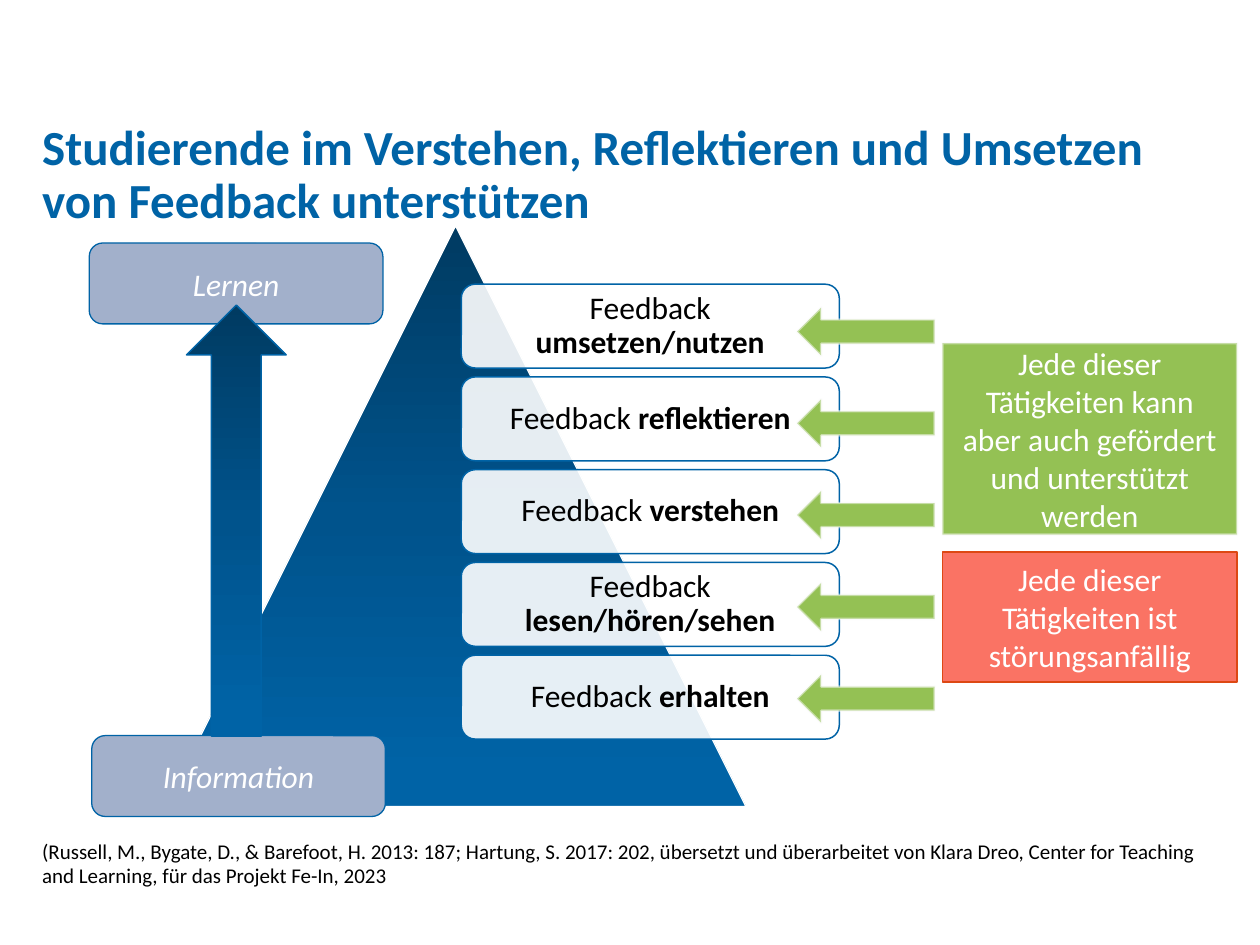
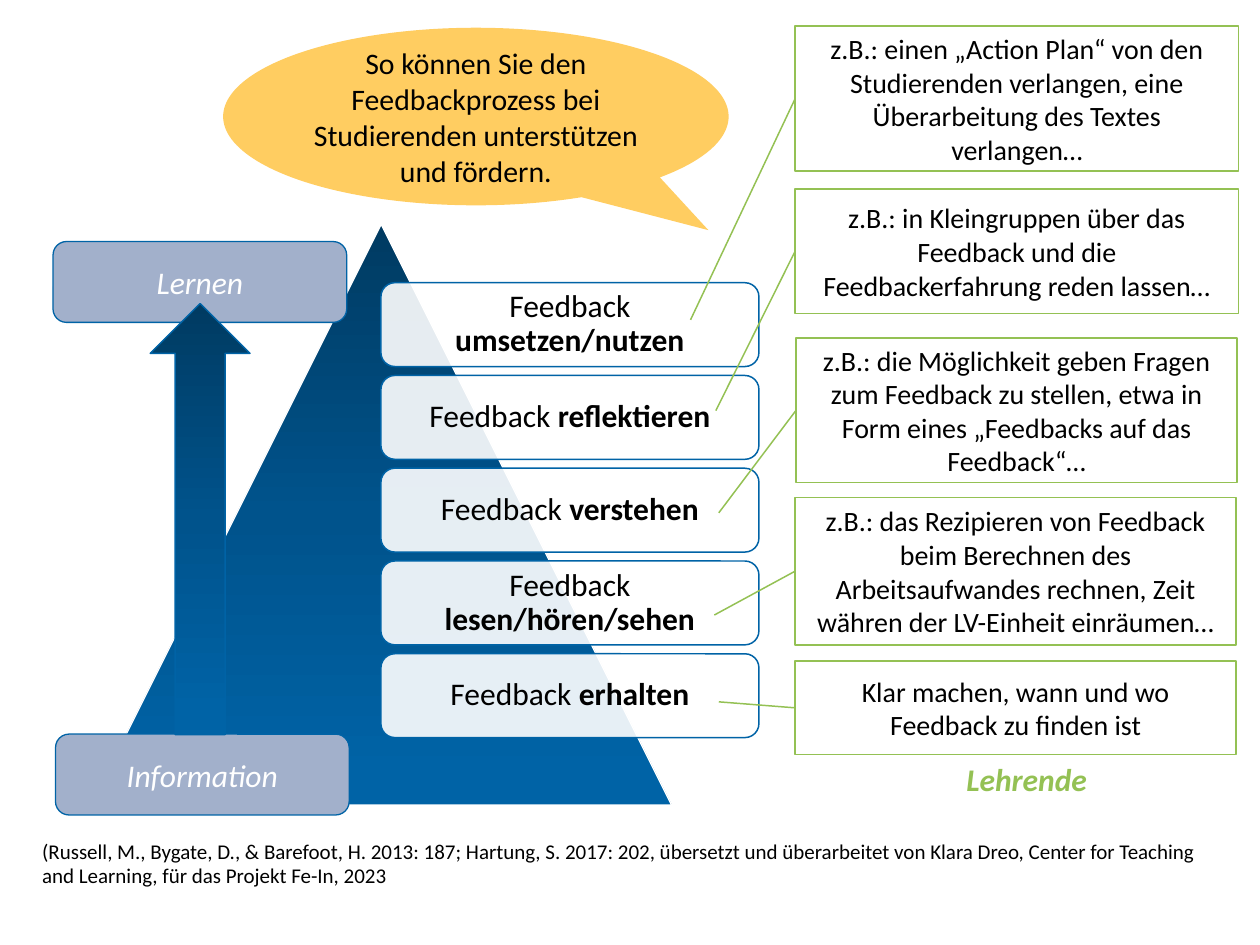
from copy import deepcopy
from dataclasses import dataclass
from typing import NamedTuple, Optional

from lxml.etree import SubElement
from pptx import Presentation
from pptx.dml.color import RGBColor
from pptx.enum.shapes import MSO_SHAPE
from pptx.enum.text import MSO_ANCHOR, MSO_AUTO_SIZE, PP_ALIGN
from pptx.oxml.ns import qn
from pptx.shapes.autoshape import Shape
from pptx.slide import Slide
from pptx.text.text import TextFrame, _Paragraph as Paragraph
from pptx.util import Cm, Pt


@dataclass(frozen=True)
class Theme:
    font: str = "Calibri"
    blue: str = "0063A6"
    gradient: tuple = ((0, "003B62"), (0.5, "00538C"), (0.95, "0063A6"))
    slate: str = "A2B0CB"
    green: str = "94C154"
    red: str = "FA7364"
    dark_red: str = "DD4814"
    yellow: str = "FFCD61"
    pale: str = "F9F9F9"
    white: str = "FFFFFF"
    black: str = "000000"
    title_size: float = 28
    body_size: float = 18
    bubble_size: float = 17
    example_size: float = 16
    source_size: float = 12


THEME = Theme()


class Box(NamedTuple):
    """A frame in centimetres."""
    left: float
    top: float
    width: float
    height: float

    def lengths(self) -> tuple:
        return tuple(Cm(value) for value in self)


@dataclass(frozen=True)
class Look:
    """Fill and outline; a fill of None stands for the blue gradient."""
    fill: Optional[str]
    line: Optional[str] = None
    width: float = 0.85
    fill_alpha: int = 100
    line_alpha: int = 100


@dataclass(frozen=True)
class Type:
    size: float = THEME.body_size
    color: str = THEME.black
    bold: bool = False
    italic: bool = False


@dataclass(frozen=True)
class PyramidLayout:
    top: float
    triangle_left: float
    steps_left: float
    axis_left: float


class Example(NamedTuple):
    text: str
    box: Box
    target: tuple[float, float]


TRIANGLE = Look(None, THEME.white)
AXIS = Look(None, THEME.blue)
STEP = Look(THEME.white, THEME.blue, fill_alpha=90)
AXIS_END = Look(THEME.slate, THEME.blue, 0.75)
SUPPORT = Look(THEME.green, THEME.pale, 1.35, line_alpha=50)
RISK = Look(THEME.red, THEME.dark_red, 0.75)
EXAMPLE = Look(THEME.white, THEME.green)
BUBBLE = Look(THEME.yellow)

WHITE_TEXT = Type(color=THEME.white)
AXIS_TEXT = Type(color=THEME.white, italic=True)

TITLE = "Studierende im Verstehen, Reflektieren und Umsetzen von Feedback unterstützen"
SOURCE = (
    "(Russell, M., Bygate, D., & Barefoot, H. 2013: 187; Hartung, S. 2017: 202, "
    "übersetzt und überarbeitet von Klara Dreo, Center for Teaching and Learning, "
    "für das Projekt Fe-In, 2023"
)
STEPS = ("umsetzen/nutzen", "reflektieren", "verstehen", "lesen/hören/sehen", "erhalten")
STEP_PITCH = 1.87
ARROW_PITCH = 1.85

EXAMPLES = (
    Example("Klar machen, wann und wo Feedback zu finden ist",
            Box(16.03, 13.33, 8.89, 1.88), (14.49, 14.15)),
    Example("z.B.: das Rezipieren von Feedback beim Berechnen des Arbeitsaufwandes "
            "rechnen, Zeit währen der LV-Einheit einräumen…",
            Box(16.03, 10.03, 8.89, 2.97), (14.4, 12.4)),
    Example("z.B.: die Möglichkeit geben Fragen zum Feedback zu stellen, etwa in Form "
            "eines „Feedbacks auf das Feedback“…",
            Box(16.05, 6.81, 8.89, 2.92), (14.49, 10.34)),
    Example("z.B.: in Kleingruppen über das Feedback und die Feedbackerfahrung "
            "reden lassen…",
            Box(16.03, 3.81, 8.94, 2.51), (14.43, 8.28)),
    Example("z.B.: einen „Action Plan“ von den Studierenden verlangen, eine "
            "Überarbeitung des Textes verlangen…",
            Box(16.03, 0.53, 8.94, 2.92), (13.92, 6.45)),
)


def rgb(color: str) -> RGBColor:
    return RGBColor.from_string(color)


def set_alpha(shape: Shape, color_parent: str, percent: int) -> None:
    """Make the fill ("a:solidFill") or the line ("a:ln/a:solidFill") translucent."""
    if percent < 100:
        color = shape.element.spPr.xpath(f"./{color_parent}/a:srgbClr")[0]
        SubElement(color, qn("a:alpha")).set("val", str(percent * 1000))


def fill_with_gradient(shape: Shape) -> None:
    shape.fill.gradient()
    shape.fill.gradient_angle = 270
    stop_list = shape.element.spPr.find(qn("a:gradFill")).find(qn("a:gsLst"))
    stop_list.append(deepcopy(stop_list[-1]))
    for stop, (position, color) in zip(shape.fill.gradient_stops, THEME.gradient):
        stop.position = position
        stop.color.rgb = rgb(color)


def add_run(paragraph: Paragraph, text: str, style: Type) -> None:
    run = paragraph.add_run()
    run.text = text
    font = run.font
    font.name = THEME.font
    font.size = Pt(style.size)
    font.bold = style.bold
    font.italic = style.italic
    font.color.rgb = rgb(style.color)


def remove_margins(frame: TextFrame) -> None:
    frame.margin_left = frame.margin_right = frame.margin_top = frame.margin_bottom = 0


def add_block(slide: Slide, kind: MSO_SHAPE, box: Box, look: Look,
              text: str = "", style: Type = WHITE_TEXT) -> Shape:
    """Add a preset shape with centred text."""
    shape = slide.shapes.add_shape(kind, *box.lengths())
    shape.shadow.inherit = False
    if look.fill is None:
        fill_with_gradient(shape)
    else:
        shape.fill.solid()
        shape.fill.fore_color.rgb = rgb(look.fill)
        set_alpha(shape, "a:solidFill", look.fill_alpha)
    if look.line is None:
        shape.line.fill.background()
    else:
        shape.line.color.rgb = rgb(look.line)
        shape.line.width = Pt(look.width)
        set_alpha(shape, "a:ln/a:solidFill", look.line_alpha)
    frame = shape.text_frame
    frame.word_wrap = True
    frame.vertical_anchor = MSO_ANCHOR.MIDDLE
    frame.paragraphs[0].alignment = PP_ALIGN.CENTER
    if text:
        add_run(frame.paragraphs[0], text, style)
    return shape


def add_text(slide: Slide, box: Box, text: str, style: Type) -> TextFrame:
    frame = slide.shapes.add_textbox(*box.lengths()).text_frame
    frame.word_wrap = True
    add_run(frame.paragraphs[0], text, style)
    return frame


def add_title(slide: Slide, text: str) -> None:
    title = slide.shapes.title
    title.left, title.top, title.width, title.height = Box(0.85, 2.46, 23.7, 2.16).lengths()
    frame = title.text_frame
    frame.auto_size = MSO_AUTO_SIZE.NONE
    frame.word_wrap = True
    frame.vertical_anchor = MSO_ANCHOR.BOTTOM
    remove_margins(frame)
    paragraph = frame.paragraphs[0]
    paragraph.alignment = PP_ALIGN.LEFT
    paragraph.line_spacing = 0.9
    add_run(paragraph, text, Type(THEME.title_size, THEME.blue, bold=True))


def add_source(slide: Slide) -> None:
    frame = add_text(slide, Box(0.85, 16.94, 23.7, 1.02), SOURCE, Type(THEME.source_size))
    remove_margins(frame)
    frame.paragraphs[0].line_spacing = 0.95


def add_step(slide: Slide, box: Box, activity: str) -> None:
    frame = add_block(slide, MSO_SHAPE.ROUNDED_RECTANGLE, box, STEP).text_frame
    frame.margin_left = frame.margin_right = Cm(0.18)
    frame.margin_top = frame.margin_bottom = Cm(0.18)
    paragraph = frame.paragraphs[0]
    paragraph.line_spacing = 0.9
    add_run(paragraph, "Feedback ", Type())
    add_run(paragraph, activity, Type(bold=True))


def add_pyramid(slide: Slide, layout: PyramidLayout) -> None:
    """Add the triangle, its five steps and the axis from Information to Lernen."""
    top, axis_left = layout.top, layout.axis_left
    add_block(slide, MSO_SHAPE.ISOSCELES_TRIANGLE,
              Box(layout.triangle_left, top, 11.71, 11.71), TRIANGLE)
    for index, activity in enumerate(STEPS):
        step_top = top + 1.18 + index * STEP_PITCH
        add_step(slide, Box(layout.steps_left, step_top, 7.62, 1.69), activity)
    for text, left, end_top in (("Lernen", axis_left, top + 0.35),
                                ("Information", axis_left + 0.05, top + 10.28)):
        add_block(slide, MSO_SHAPE.ROUNDED_RECTANGLE, Box(left, end_top, 5.92, 1.63),
                  AXIS_END, text, AXIS_TEXT)
    add_block(slide, MSO_SHAPE.UP_ARROW, Box(axis_left + 1.96, top + 1.6, 2.01, 8.69), AXIS)


def add_example(slide: Slide, example: Example) -> None:
    """Add a callout whose line runs from the left edge to the target point."""
    box, (target_x, target_y) = example.box, example.target
    callout = add_block(slide, MSO_SHAPE.LINE_CALLOUT_1, box, EXAMPLE,
                        example.text, Type(THEME.example_size))
    ends = (0.5, 0, (target_y - box.top) / box.height, (target_x - box.left) / box.width)
    for index, value in enumerate(ends):
        callout.adjustments[index] = value


def build_overview(slide: Slide) -> None:
    add_title(slide, TITLE)
    add_pyramid(slide, PyramidLayout(4.55, 3.33, 9.3, 1.8))
    add_source(slide)
    add_block(slide, MSO_SHAPE.RECTANGLE, Box(19, 6.92, 5.94, 3.86), SUPPORT,
              "Jede dieser Tätigkeiten kann aber auch gefördert und unterstützt werden")
    add_block(slide, MSO_SHAPE.RECTANGLE, Box(19, 11.13, 5.94, 2.62), RISK,
              "Jede dieser Tätigkeiten ist störungsanfällig")
    for index in range(len(STEPS)):
        add_block(slide, MSO_SHAPE.LEFT_ARROW,
                  Box(16.07, 6.2 + index * ARROW_PITCH, 2.77, 0.97), SUPPORT)


def build_examples(slide: Slide) -> None:
    add_pyramid(slide, PyramidLayout(4.52, 1.83, 7.68, 1.07))
    for example in EXAMPLES:
        add_example(slide, example)
    add_text(slide, Box(19.23, 15.19, 5.7, 1.02), "Lehrende",
             Type(color=THEME.green, bold=True, italic=True))
    add_source(slide)
    bubble = add_block(slide, MSO_SHAPE.OVAL_CALLOUT, Box(4.5, 0.56, 10.19, 3.58), BUBBLE,
                       "So können Sie den Feedbackprozess bei Studierenden "
                       "unterstützen und fördern.", Type(THEME.bubble_size))
    bubble.adjustments[0], bubble.adjustments[1] = 0.46, 0.64


def main() -> None:
    presentation = Presentation()
    presentation.slide_width, presentation.slide_height = Cm(25.4), Cm(19.05)
    title_only, blank = presentation.slide_layouts[5], presentation.slide_layouts[6]
    build_overview(presentation.slides.add_slide(title_only))
    build_examples(presentation.slides.add_slide(blank))
    presentation.save("out.pptx")


if __name__ == "__main__":
    main()
